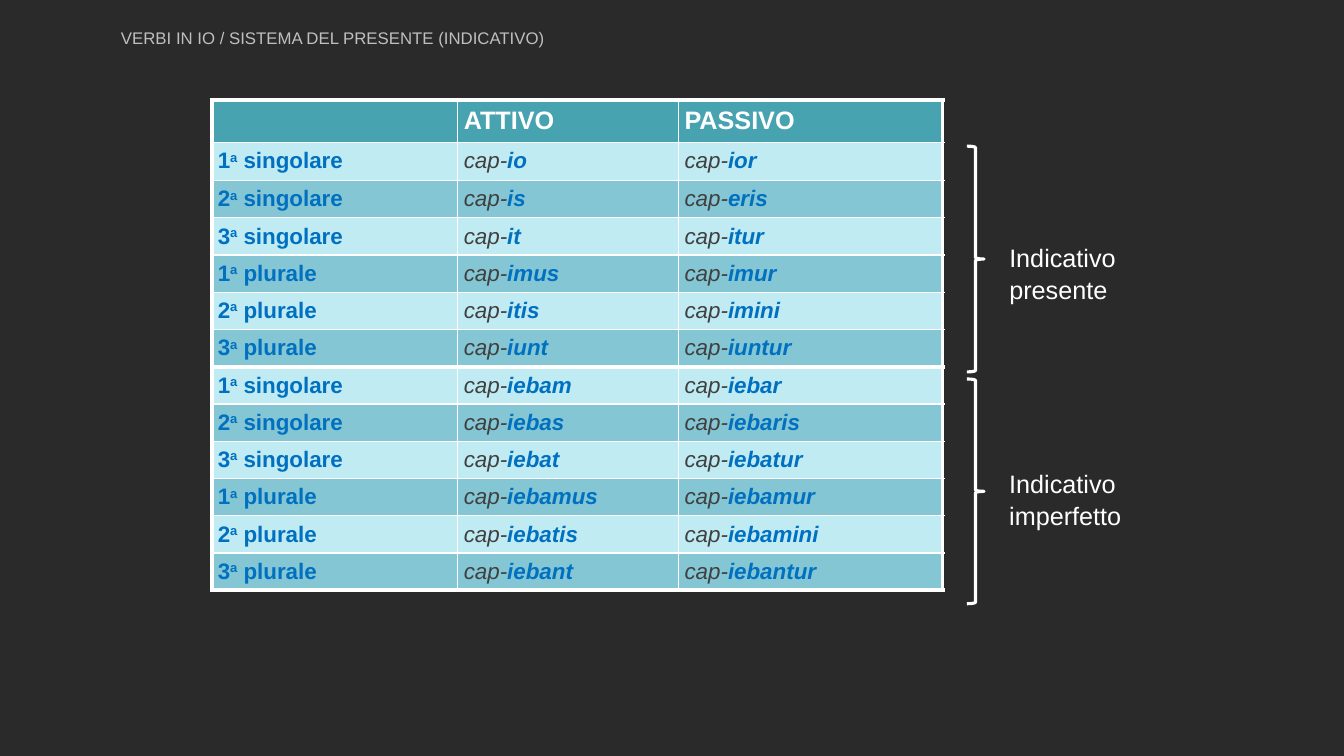
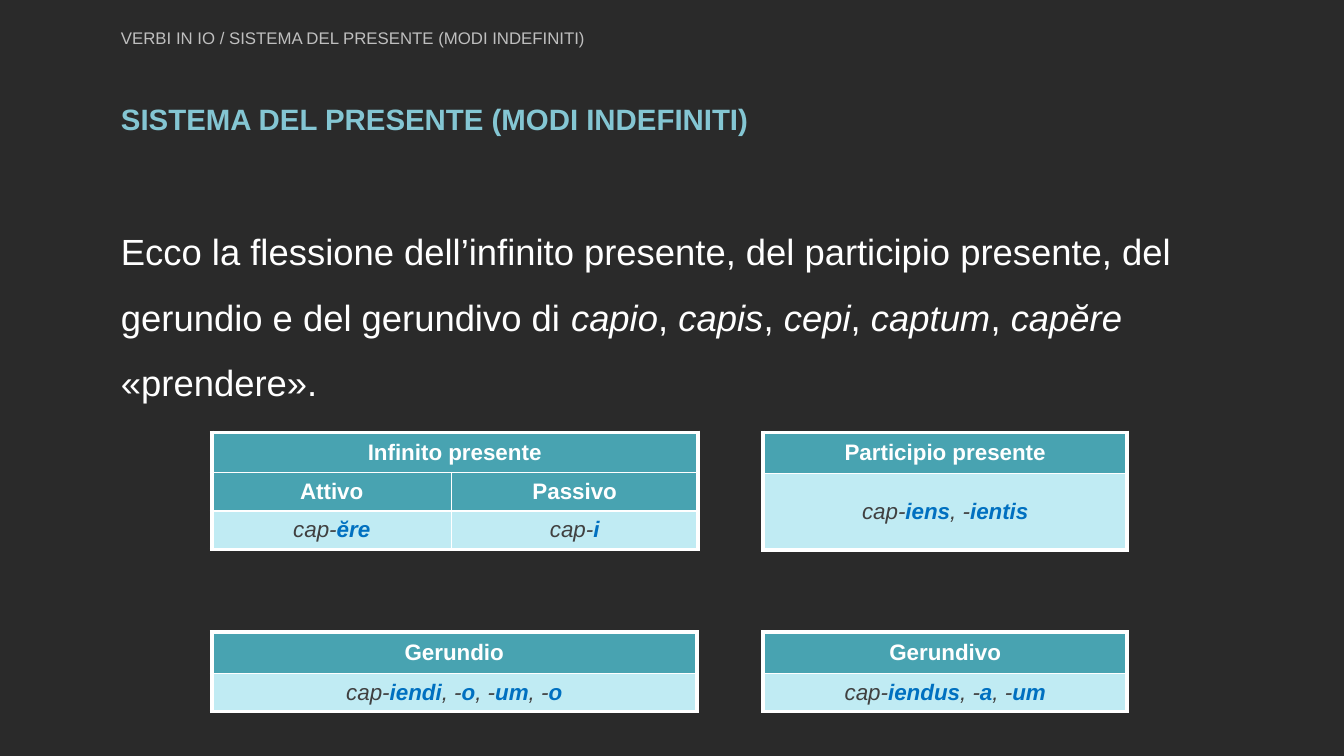
from dataclasses import dataclass

import lxml.etree
import pptx
import pptx.dml.color
import pptx.enum.shapes
import pptx.enum.text
import pptx.oxml.ns
import pptx.presentation
import pptx.shapes.base
import pptx.slide
import pptx.table
import pptx.text.text
import pptx.util

RGB = pptx.dml.color.RGBColor
PP_ALIGN = pptx.enum.text.PP_ALIGN
ANCHOR = pptx.enum.text.MSO_ANCHOR

EMU_PER_PX = 9144
FONT = "Arial"
BACKGROUND = RGB(0x2A, 0x2A, 0x2A)
WHITE = RGB(0xFF, 0xFF, 0xFF)
SILVER = RGB(0xBF, 0xBF, 0xBF)
TEAL = RGB(0x48, 0xA3, 0xB1)
AQUA = RGB(0x84, 0xC6, 0xD3)
PALE = RGB(0xC0, 0xEB, 0xF3)
STEM_GREY = RGB(0x40, 0x40, 0x40)
ENDING_BLUE = RGB(0x00, 0x70, 0xC0)

THICK = 3
THIN = 1
LEFT_TABLE = 210
RIGHT_TABLE = 757


@dataclass(frozen=True)
class Box:
    x: int
    y: int
    w: int
    h: int


@dataclass(frozen=True)
class Run:
    text: str
    color: RGB = WHITE
    size: int = 16
    bold: bool = False
    italic: bool = False
    raised: bool = False


@dataclass(frozen=True)
class Row:
    height: int
    fill: RGB
    cells: list[list[Run]]
    thick_below: bool = False


@dataclass(frozen=True)
class Grid:
    x: int
    y: int
    widths: list[int]
    rows: list[Row]
    align: PP_ALIGN = PP_ALIGN.CENTER


@dataclass(frozen=True)
class Tense:
    label: str
    brace: Box
    label_box: Box
    active: list[str]
    passive: list[str]


TENSES = [
    Tense("Indicativo presente", Box(959, 145, 17, 224), Box(996, 234, 201, 71),
          ["io", "is", "it", "imus", "itis", "iunt"],
          ["ior", "eris", "itur", "imur", "imini", "iuntur"]),
    Tense("Indicativo imperfetto", Box(959, 376, 17, 223), Box(996, 458, 217, 71),
          ["iebam", "iebas", "iebat", "iebamus", "iebatis", "iebant"],
          ["iebar", "iebaris", "iebatur", "iebamur", "iebamini", "iebantur"]),
]


def px(n: int) -> int:
    return pptx.util.Emu(n * EMU_PER_PX)


def heading(text: str, size: int = 16) -> list[Run]:
    return [Run(text, size=size, bold=True)]


def forms(*parts: str) -> list[Run]:
    return [Run(part, ENDING_BLUE if i % 2 else STEM_GREY, bold=i % 2 == 1, italic=True)
            for i, part in enumerate(parts)]


def person(index: int) -> list[Run]:
    number = "singolare" if index < 3 else "plurale"
    return [Run(str(index % 3 + 1), ENDING_BLUE, bold=True),
            Run("a", ENDING_BLUE, bold=True, raised=True),
            Run(f" {number}", ENDING_BLUE, bold=True)]


def add_runs(p: pptx.text.text._Paragraph, runs: list[Run]) -> None:
    for run in runs:
        r = p.add_run()
        r.text = run.text
        r.font.name = FONT
        r.font.size = pptx.util.Pt(run.size)
        r.font.color.rgb = run.color
        r.font.bold = run.bold
        r.font.italic = run.italic
        if run.raised:
            r._r.get_or_add_rPr().set("baseline", "30000")


def place(sp: pptx.shapes.base.BaseShape, box: Box) -> None:
    sp.left, sp.top, sp.width, sp.height = px(box.x), px(box.y), px(box.w), px(box.h)


def fill_frame(tf: pptx.text.text.TextFrame, runs: list[Run],
               anchor: ANCHOR = ANCHOR.TOP, spacing: float = 1.0) -> None:
    tf.word_wrap = True
    tf.auto_size = pptx.enum.text.MSO_AUTO_SIZE.NONE
    tf.vertical_anchor = anchor
    tf.margin_left = tf.margin_right = tf.margin_top = tf.margin_bottom = px(5)
    p = tf.paragraphs[0]
    p.alignment = PP_ALIGN.LEFT
    p.line_spacing = spacing
    add_runs(p, runs)


def add_text(s: pptx.slide.Slide, box: Box, runs: list[Run], spacing: float = 1.0) -> None:
    sp = s.shapes.add_textbox(px(box.x), px(box.y), px(box.w), px(box.h))
    fill_frame(sp.text_frame, runs, spacing=spacing)


def add_slide(prs: pptx.presentation.Presentation, title: str) -> pptx.slide.Slide:
    s = prs.slides.add_slide(prs.slide_layouts[5])
    place(s.shapes.title, Box(115, 22, 748, 30))
    fill_frame(s.shapes.title.text_frame, [Run(title, SILVER, 12)], ANCHOR.MIDDLE)
    return s


def set_borders(cell: pptx.table._Cell, widths: dict[str, int]) -> None:
    tc_pr = cell._tc.get_or_add_tcPr()
    for i, (side, width) in enumerate(widths.items()):
        ln = lxml.etree.Element(pptx.oxml.ns.qn(f"a:ln{side}"), w=str(pptx.util.Pt(width)))
        fill = lxml.etree.SubElement(ln, pptx.oxml.ns.qn("a:solidFill"))
        lxml.etree.SubElement(fill, pptx.oxml.ns.qn("a:srgbClr"), val=str(WHITE))
        tc_pr.insert(i, ln)


def add_grid(s: pptx.slide.Slide, grid: Grid) -> None:
    n_rows, n_cols = len(grid.rows), len(grid.widths)
    height = sum(row.height for row in grid.rows)
    table = s.shapes.add_table(n_rows, n_cols, px(grid.x), px(grid.y),
                               px(sum(grid.widths)), px(height)).table
    table.first_row = table.horz_banding = False
    for col, width in zip(table.columns, grid.widths):
        col.width = px(width)
    above = True
    for i, row in enumerate(grid.rows):
        table.rows[i].height = px(row.height)
        below = row.thick_below or i == n_rows - 1
        if len(row.cells) < n_cols:
            table.cell(i, 0).merge(table.cell(i, n_cols - 1))
        for j in range(n_cols):
            cell = table.cell(i, j)
            cell.fill.solid()
            cell.fill.fore_color.rgb = row.fill
            cell.vertical_anchor = ANCHOR.MIDDLE
            cell.margin_left = cell.margin_right = px(6)
            cell.margin_top = cell.margin_bottom = px(5)
            last = j == n_cols - 1 or cell.is_merge_origin
            set_borders(cell, {"L": THIN if j else THICK, "R": THICK if last else THIN,
                               "T": THICK if above else THIN, "B": THICK if below else THIN})
            if j < len(row.cells):
                p = cell.text_frame.paragraphs[0]
                p.alignment = grid.align
                add_runs(p, row.cells[j])
        above = below


def add_brace(s: pptx.slide.Slide, box: Box) -> None:
    sp = s.shapes.add_shape(pptx.enum.shapes.MSO_SHAPE.RIGHT_BRACE,
                            px(box.x), px(box.y), px(box.w), px(box.h))
    sp.shadow.inherit = False
    sp.fill.background()
    sp.line.color.rgb = WHITE
    sp.line.width = pptx.util.Pt(2.25)


def build_indicative(prs: pptx.presentation.Presentation) -> None:
    s = add_slide(prs, "VERBI IN IO / SISTEMA DEL PRESENTE (INDICATIVO)")
    rows = [Row(42, TEAL, [[], heading("ATTIVO", 18), heading("PASSIVO", 18)])]
    for tense in TENSES:
        for i, (active, passive) in enumerate(zip(tense.active, tense.passive)):
            rows.append(Row(38 if len(rows) == 1 else 37, AQUA if i % 2 else PALE,
                            [person(i), forms("cap-", active), forms("cap-", passive)],
                            thick_below=i == 5))
    add_grid(s, Grid(LEFT_TABLE, 99, [244, 219, 262], rows, PP_ALIGN.LEFT))
    for tense in TENSES:
        add_brace(s, tense.brace)
        add_text(s, tense.label_box, [Run(tense.label, size=18)], 1.05)


def build_non_finite(prs: pptx.presentation.Presentation) -> None:
    s = add_slide(prs, "VERBI IN IO / SISTEMA DEL PRESENTE (MODI INDEFINITI)")
    add_text(s, Box(115, 99, 1102, 42),
             [Run("SISTEMA DEL PRESENTE (MODI INDEFINITI)", AQUA, 21, bold=True)], 0.9)

    intro = [Run("Ecco la flessione dell’infinito presente, del participio presente, "
                 "del gerundio e del gerundivo di ", size=26)]
    for i, word in enumerate(["capio", "capis", "cepi", "captum", "capĕre"]):
        if i:
            intro.append(Run(", ", size=26))
        intro.append(Run(word, size=26, italic=True))
    intro.append(Run(" «prendere».", size=26))
    add_text(s, Box(115, 201, 1102, 195), intro, 1.5)

    add_grid(s, Grid(LEFT_TABLE, 429, [238, 244], [
        Row(40, TEAL, [heading("Infinito presente")]),
        Row(38, TEAL, [heading("Attivo"), heading("Passivo")]),
        Row(38, PALE, [forms("cap-", "ĕre"), forms("cap-", "i")]),
    ]))
    for x, y, width, height, title, cell in [
        (RIGHT_TABLE, 429, 361, 76, "Participio presente",
         forms("cap-", "iens", ", -", "ientis")),
        (LEFT_TABLE, 627, 481, 38, "Gerundio",
         forms("cap-", "iendi", ", -", "o", ", -", "um", ", -", "o")),
        (RIGHT_TABLE, 627, 361, 38, "Gerundivo",
         forms("cap-", "iendus", ", -", "a", ", -", "um")),
    ]:
        add_grid(s, Grid(x, y, [width], [Row(41, TEAL, [heading(title)]),
                                         Row(height, PALE, [cell])]))


def main() -> None:
    prs = pptx.Presentation()
    prs.slide_width, prs.slide_height = px(1333), px(750)
    fill = prs.slide_master.background.fill
    fill.solid()
    fill.fore_color.rgb = BACKGROUND
    build_indicative(prs)
    build_non_finite(prs)
    prs.save("out.pptx")


if __name__ == "__main__":
    main()
